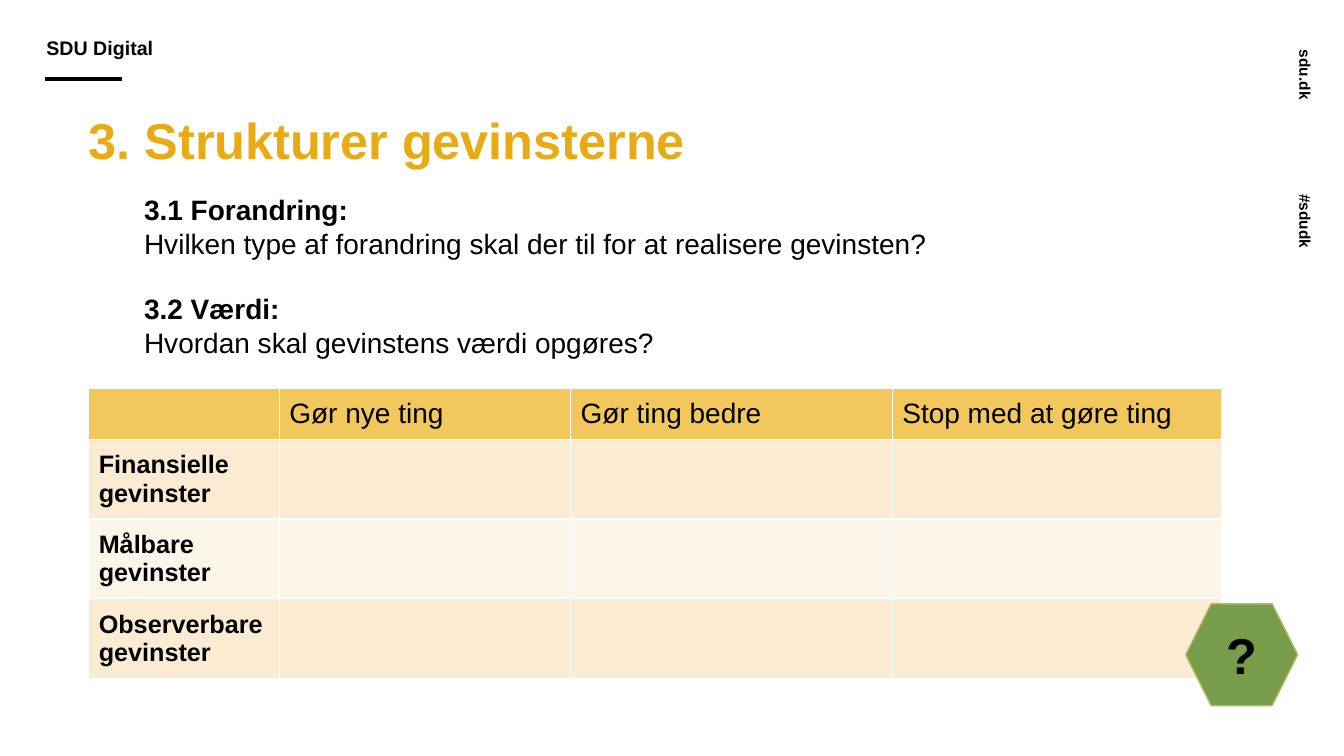
import pptx
import pptx.dml.color
import pptx.enum.shapes
import pptx.enum.text
import pptx.oxml
import pptx.oxml.ns
import pptx.util

PX = 9144  # EMU per px, 100 px to the inch
FONT = "Arial"
COLORS = {
    "ink": "000000",
    "title": "E8AB13",
    "header": "F2C75C",
    "band_dark": "FAEBD2",
    "band_light": "FCF5EA",
    "grid": "FFFFFF",
    "hexagon": "789D4A",
    "hexagon_edge": "AEB862",
}
ANCHOR = pptx.enum.text.MSO_ANCHOR
COLUMN_WIDTHS = [189, 289, 319, 327]
HEADER_HEIGHT, ROW_HEIGHT = 51, 79
GAIN_TABLE = [
    ["", "Gør nye ting", "Gør ting bedre", "Stop med at gøre ting"],
    ["Finansielle\vgevinster", "", "", ""],
    ["Målbare\vgevinster", "", "", ""],
    ["Observerbare gevinster", "", "", ""],
]
QUESTIONS = [
    ("3.1 Forandring:", True),
    ("Hvilken type af forandring skal der til for at realisere gevinsten?", False),
    ("3.2 Værdi:", True),
    ("Hvordan skal gevinstens værdi opgøres?", False),
]


def box(*lengths):
    return [px * PX for px in lengths]


def rgb(name):
    return pptx.dml.color.RGBColor.from_string(COLORS[name])


def style(paragraph, size, bold=True, color="ink"):
    paragraph.font.name = FONT
    paragraph.font.size = pptx.util.Pt(size)
    paragraph.font.bold = bold
    paragraph.font.color.rgb = rgb(color)


def set_margins(frame, left, top, right, bottom):
    frame.margin_left, frame.margin_top, frame.margin_right, frame.margin_bottom = box(
        left, top, right, bottom)


def add_label(slide, place, text, size, color="ink", anchor=ANCHOR.BOTTOM,
              margins=(0, 0, 0, 0), spacing=None, rotation=0):
    label = slide.shapes.add_textbox(*box(*place))
    label.rotation = rotation
    frame = label.text_frame
    frame.word_wrap = True
    frame.vertical_anchor = anchor
    set_margins(frame, *margins)
    paragraph = frame.paragraphs[0]
    paragraph.text = text
    paragraph.line_spacing = spacing
    style(paragraph, size, color=color)


def add_rule(slide, left, right, y):
    rule = slide.shapes.add_connector(
        pptx.enum.shapes.MSO_CONNECTOR.STRAIGHT, *box(left, y, right, y))
    rule.line.color.rgb = rgb("ink")
    rule.line.width = pptx.util.Pt(3)
    rule._element.spPr.append(pptx.oxml.parse_xml(
        f'<a:effectLst {pptx.oxml.ns.nsdecls("a")}/>'))


def add_questions(slide):
    frame = slide.shapes.add_textbox(*box(133, 186, 888, 178)).text_frame
    frame.word_wrap = True
    for index, (text, is_heading) in enumerate(QUESTIONS):
        paragraph = frame.add_paragraph() if index else frame.paragraphs[0]
        paragraph.text = text
        if is_heading and index:
            paragraph.space_before = pptx.util.Pt(23)
        style(paragraph, 20, bold=is_heading)


def add_borders(cell):
    properties = cell._tc.get_or_add_tcPr()
    for side in "LRTB":
        properties.append(pptx.oxml.parse_xml(
            f'<a:ln{side} {pptx.oxml.ns.nsdecls("a")} w="12700"><a:solidFill>'
            f'<a:srgbClr val="{COLORS["grid"]}"/></a:solidFill></a:ln{side}>'))


def add_gain_table(slide):
    height = HEADER_HEIGHT + ROW_HEIGHT * (len(GAIN_TABLE) - 1)
    table = slide.shapes.add_table(
        len(GAIN_TABLE), len(COLUMN_WIDTHS),
        *box(88, 385, sum(COLUMN_WIDTHS), height)).table
    for column, width in zip(table.columns, COLUMN_WIDTHS):
        column.width = width * PX
    for r, texts in enumerate(GAIN_TABLE):
        is_header = r == 0
        table.rows[r].height = (HEADER_HEIGHT if is_header else ROW_HEIGHT) * PX
        fill = "header" if is_header else "band_dark" if r % 2 else "band_light"
        for c, text in enumerate(texts):
            cell = table.cell(r, c)
            add_borders(cell)
            cell.fill.solid()
            cell.fill.fore_color.rgb = rgb(fill)
            cell.vertical_anchor = ANCHOR.MIDDLE
            paragraph = cell.text_frame.paragraphs[0]
            paragraph.text = text
            style(paragraph, 20 if is_header else 18, bold=not is_header)


def add_hexagon(slide, place, text):
    hexagon = slide.shapes.add_shape(
        pptx.enum.shapes.MSO_SHAPE.HEXAGON, *box(*place))
    hexagon.shadow.inherit = False
    hexagon.fill.solid()
    hexagon.fill.fore_color.rgb = rgb("hexagon")
    hexagon.line.color.rgb = rgb("hexagon_edge")
    hexagon.line.width = pptx.util.Pt(1)
    frame = hexagon.text_frame
    set_margins(frame, 8, 8, 8, 8)
    frame.vertical_anchor = ANCHOR.MIDDLE
    paragraph = frame.paragraphs[0]
    paragraph.text = text
    paragraph.alignment = pptx.enum.text.PP_ALIGN.CENTER
    style(paragraph, 36)


def main():
    deck = pptx.Presentation()
    deck.slide_width, deck.slide_height = box(1333, 750)
    slide = deck.slides.add_slide(deck.slide_layouts[6])
    for text, top in (("sdu.dk", 79), ("#sdudk", 222)):
        add_label(slide, (1256, top, 100, 41), text, 11, rotation=90)
    add_rule(slide, 45, 121, 78)
    add_label(slide, (45, 38, 554, 31), "SDU Digital", 14,
              margins=(1, 0, 0, 10), spacing=0.9)
    add_label(slide, (88, 112, 1138, 92), "3. Strukturer gevinsterne", 36,
              color="title", anchor=ANCHOR.TOP, spacing=0.97)
    add_questions(slide)
    add_gain_table(slide)
    add_hexagon(slide, (1176, 599, 111, 101), "?")
    deck.save("out.pptx")


if __name__ == "__main__":
    main()
